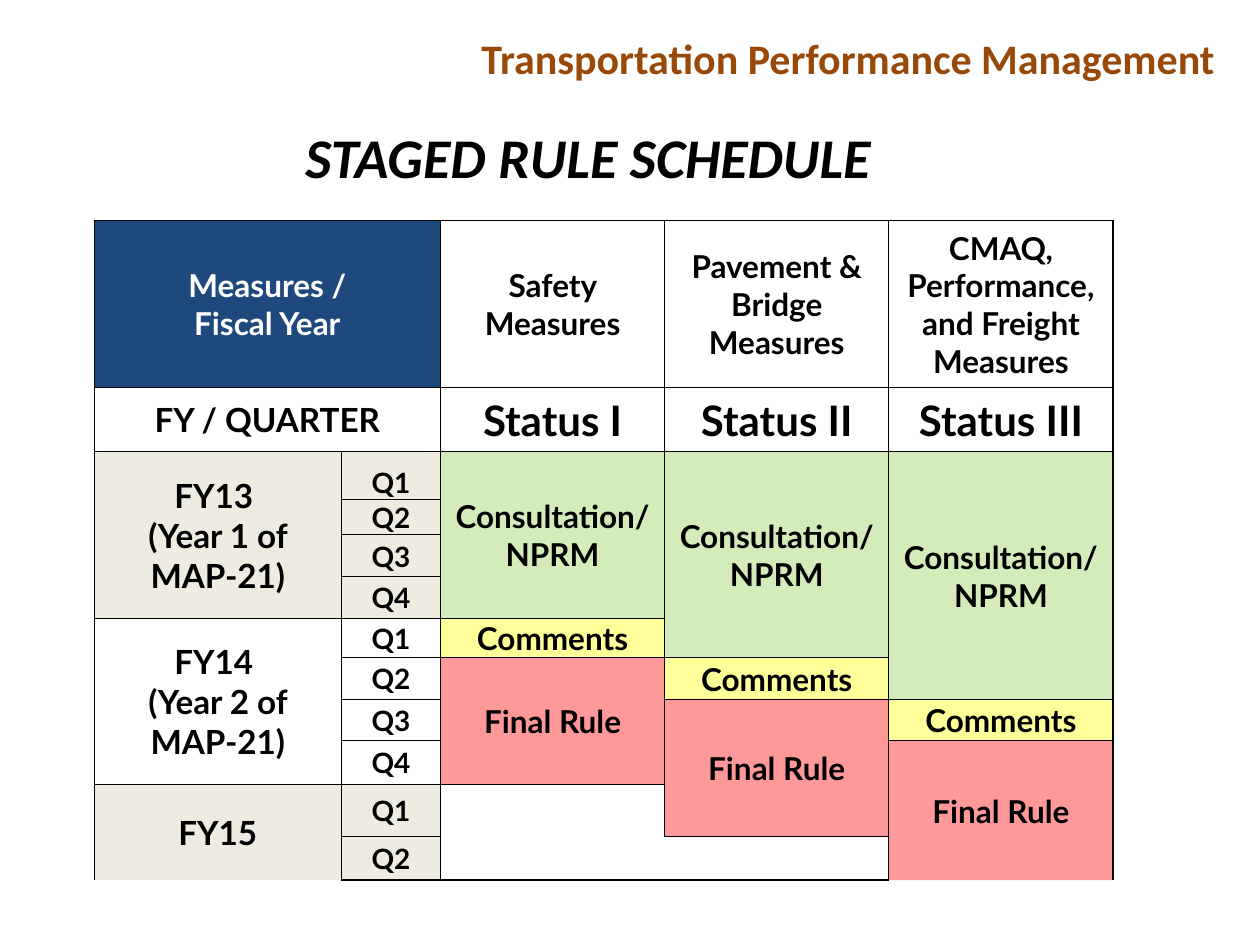
from dataclasses import dataclass

from lxml import etree
from pptx import Presentation
from pptx.dml.color import RGBColor
from pptx.enum.text import MSO_ANCHOR, PP_ALIGN
from pptx.oxml import parse_xml
from pptx.oxml.ns import nsdecls, qn
from pptx.util import Cm, Pt

CENTER, RIGHT = PP_ALIGN.CENTER, PP_ALIGN.RIGHT
MIDDLE, BOTTOM = MSO_ANCHOR.MIDDLE, MSO_ANCHOR.BOTTOM


@dataclass(frozen=True)
class Theme:
    black: str = "000000"
    white: str = "FFFFFF"
    brown: str = "984807"
    navy: str = "1F497D"
    beige: str = "EEECE1"
    green: str = "92D050"
    yellow: str = "FFFF00"
    red: str = "FF0000"
    stage_alpha: int = 40000
    heading_font: str = "Calibri"
    table_font: str = "Lato"
    title: int = 32
    header: int = 24
    status: int = 24
    year: int = 19
    body: int = 18
    quarter: int = 16
    outer_line: int = 12700
    inner_line: int = 6350


theme = Theme()


def style_font(font, name, size, color):
    font.name = name
    font.size = Pt(size)
    font.bold = True
    font.color.rgb = RGBColor.from_string(color)


def add_block(row, col, height, width, text, size, fill=None,
              color=theme.black, alpha=None, anchor=MIDDLE):
    cell = table.cell(row, col)
    last_row, last_col = row + height - 1, col + width - 1
    if height * width > 1:
        cell.merge(table.cell(last_row, last_col))
    for r in range(row, last_row + 1):
        for c in range(col, last_col + 1):
            tcPr = table.cell(r, c)._tc.get_or_add_tcPr()
            for side, on_edge, outer in (
                ("L", c == col, c == 0),
                ("R", c == last_col, c == len(col_widths) - 1),
                ("T", r == row, r == 0),
                ("B", r == last_row, r == len(row_heights) - 1),
            ):
                if on_edge:
                    weight = theme.outer_line if outer else theme.inner_line
                    tcPr.append(parse_xml(
                        f'<a:ln{side} {nsdecls("a")} w="{weight}"><a:solidFill>'
                        f'<a:srgbClr val="{theme.black}"/></a:solidFill></a:ln{side}>'))
    if fill:
        cell.fill.solid()
        cell.fill.fore_color.rgb = RGBColor.from_string(fill)
        if alpha:
            rgb = cell._tc.tcPr.find(qn("a:solidFill")).find(qn("a:srgbClr"))
            etree.SubElement(rgb, qn("a:alpha"), val=str(alpha))
    else:
        cell.fill.background()
    cell.margin_left = cell.margin_right = cell.margin_top = Cm(0.03)
    cell.margin_bottom = 0
    cell.vertical_anchor = anchor
    cell.text_frame.text = text
    for p in cell.text_frame.paragraphs:
        p.alignment = CENTER
        style_font(p.font, theme.table_font, size, color)


prs = Presentation()
prs.slide_width, prs.slide_height = Cm(25.4), Cm(19.05)
s = prs.slides.add_slide(prs.slide_layouts[5])

header = s.shapes.add_textbox(Cm(9.3), Cm(0.53), Cm(15.44), Cm(1.27))
header.text_frame.word_wrap = False
p = header.text_frame.paragraphs[0]
p.alignment = RIGHT
r = p.add_run()
r.text = "Transportation Performance Management"
style_font(r.font, theme.heading_font, theme.header, theme.brown)
r.font._element.find(qn("a:solidFill")).addnext(parse_xml(
    f'<a:effectLst {nsdecls("a")}><a:outerShdw blurRad="38100" dist="38100" dir="2700000">'
    f'<a:srgbClr val="{theme.black}"><a:alpha val="43000"/></a:srgbClr>'
    '</a:outerShdw></a:effectLst>'))

title = s.shapes.title
title.left, title.top, title.width, title.height = Cm(0.43), Cm(2.34), Cm(22.86), Cm(1.6)
title.text_frame.text = "STAGED RULE SCHEDULE"
p = title.text_frame.paragraphs[0]
p.alignment = CENTER
style_font(p.font, theme.heading_font, theme.title, theme.black)
p.font.italic = True

col_widths = [4.98, 2.0, 4.52, 4.52, 4.52]
row_heights = [3.35, 1.3, 0.97, 0.71, 0.84, 0.84, 0.79, 0.84, 0.84, 0.87, 1.06, 0.88]
frame = s.shapes.add_table(len(row_heights), len(col_widths), Cm(1.9), Cm(4.45),
                           Cm(sum(col_widths)), Cm(sum(row_heights)))
table = frame.table
table.first_row = table.horz_banding = False
table._tbl.tblPr.find(qn("a:tableStyleId")).text = "{2D5ABB26-0587-4C30-8999-92F81FD0307C}"
for column, width in zip(table.columns, col_widths):
    column.width = Cm(width)
for table_row, height in zip(table.rows, row_heights):
    table_row.height = Cm(height)

add_block(0, 0, 1, 2, "Measures /\nFiscal Year", theme.body, theme.navy, theme.white)
add_block(1, 0, 1, 2, "FY / QUARTER", theme.year)

first_row = 2
years = [
    ("FY13 \n(Year 1 of MAP-21)", 4, theme.beige),
    ("FY14 \n(Year 2 of MAP-21)", 4, None),
    ("FY15", 2, theme.beige),
]
row = first_row
for label, quarters, fill in years:
    add_block(row, 0, quarters, 1, label, theme.year, fill)
    for q in range(quarters):
        anchor = BOTTOM if row + q == first_row else MIDDLE
        add_block(row + q, 1, 1, 1, f"Q{q + 1}", theme.quarter, fill, anchor=anchor)
    row += quarters

measures = [
    ("Safety Measures", "Status I"),
    ("Pavement & Bridge Measures", "Status II"),
    ("CMAQ, Performance, and Freight Measures", "Status III"),
]
for i, (measure, status) in enumerate(measures):
    col = 2 + i
    add_block(0, col, 1, 1, measure, theme.body)
    add_block(1, col, 1, 1, status, theme.status)
    row = first_row
    for stage, quarters, fill in (
        ("Consultation/NPRM", 4 + i, theme.green),
        ("Comments", 1, theme.yellow),
        ("Final Rule", 3, theme.red),
    ):
        add_block(row, col, quarters, 1, stage, theme.body, fill, alpha=theme.stage_alpha)
        row += quarters

for col in (2, 3):
    tcPr = table.cell(len(row_heights) - 1, col)._tc.get_or_add_tcPr()
    tcPr.append(parse_xml(
        f'<a:lnB {nsdecls("a")} w="{theme.outer_line}"><a:solidFill>'
        f'<a:srgbClr val="{theme.black}"/></a:solidFill></a:lnB>'))
for row, col in ((10, 2), (11, 2), (11, 3)):
    cell = table.cell(row, col)
    cell.fill.background()
    cell.margin_top = cell.margin_bottom = 0

prs.save("out.pptx")
